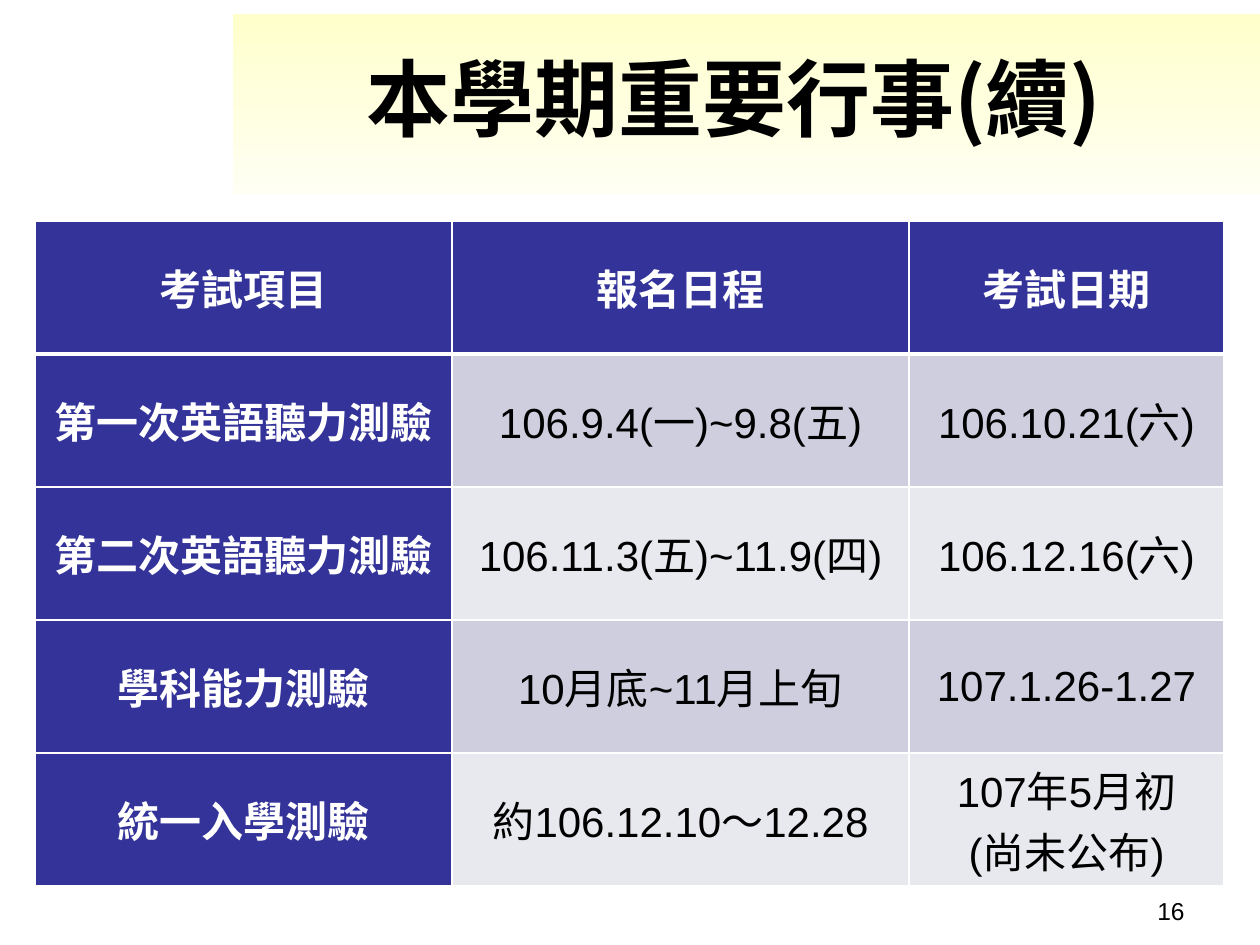
"""Build the slide listing the semester's exam registration and test dates."""
import pptx
import pptx.dml.color
import pptx.enum.shapes
import pptx.enum.text
import pptx.oxml
import pptx.oxml.ns
import pptx.util

TITLE = "本學期重要行事(續)"
PAGE_NUMBER = "16"
EXAMS = [
    ("考試項目", "報名日程", "考試日期"),
    ("第一次英語聽力測驗", "106.9.4(一)~9.8(五)", "106.10.21(六)"),
    ("第二次英語聽力測驗", "106.11.3(五)~11.9(四)", "106.12.16(六)"),
    ("學科能力測驗", "10月底~11月上旬", "107.1.26-1.27"),
    ("統一入學測驗", "約106.12.10～12.28", "107年5月初\n(尚未公布)"),
]
COLORS = {
    "black": "000000", "white": "FFFFFF", "heading": "333399",
    "odd": "CECEDE", "even": "E8E8EF",
    "band_top": "FFFFCC", "band_bottom": "FFFFF3",
}
LATIN, CJK = "Arial", "Noto Sans CJK SC"
BAND = (233, 14, 1027, 180)
TITLE_BOX = (223, 48, 1022, 98)
NUMBER_BOX = (903, 890, 294, 49)
TABLE_LEFT, TABLE_TOP = 35, 221
COLUMN_WIDTHS = (417, 457, 315)
ROW_HEIGHT = 133
CELL_INSET = 9
ALIGN = pptx.enum.text.PP_ALIGN
MIDDLE = pptx.enum.text.MSO_ANCHOR.MIDDLE


def px(length):
    return pptx.util.Emu(round(length * 914400 / 126))


def color(name):
    return pptx.dml.color.RGBColor.from_string(COLORS[name])


def write(frame, text, size, align, ink="black", bold=False, latin=LATIN):
    frame.text = text
    for para in frame.paragraphs:
        para.alignment = align
        for span in para.runs:
            span.font.size = pptx.util.Pt(size)
            span.font.bold = bold
            span.font.name = latin
            span.font.color.rgb = color(ink)
            east_asian = pptx.oxml.parse_xml(
                f'<a:ea {pptx.oxml.ns.nsdecls("a")} typeface="{CJK}"/>')
            span.font._element.find(pptx.oxml.ns.qn("a:latin")).addnext(east_asian)


def add_border(cell, side, points):
    cell._tc.get_or_add_tcPr().append(pptx.oxml.parse_xml(
        f'<a:{side} {pptx.oxml.ns.nsdecls("a")} w="{pptx.util.Pt(points)}">'
        f'<a:solidFill><a:srgbClr val="{COLORS["white"]}"/></a:solidFill></a:{side}>'))


def add_band(page):
    band = page.shapes.add_shape(
        pptx.enum.shapes.MSO_SHAPE.RECTANGLE, *map(px, BAND))
    band.shadow.inherit = False
    band.line.fill.background()
    band.fill.gradient()
    band.fill.gradient_angle = 270
    for stop, name in zip(band.fill.gradient_stops, ("band_top", "band_bottom")):
        stop.color.rgb = color(name)
    page.shapes.title._element.addprevious(band._element)


def add_title(page):
    title = page.shapes.title
    title.left, title.top, title.width, title.height = map(px, TITLE_BOX)
    title.text_frame.vertical_anchor = MIDDLE
    write(title.text_frame, TITLE, 48, ALIGN.CENTER, bold=True, latin=CJK)


def add_exam_table(page):
    table = page.shapes.add_table(
        len(EXAMS), len(COLUMN_WIDTHS), px(TABLE_LEFT), px(TABLE_TOP),
        px(sum(COLUMN_WIDTHS)), px(ROW_HEIGHT * len(EXAMS))).table
    for column, width in zip(table.columns, COLUMN_WIDTHS):
        column.width = px(width)
    for r, exam in enumerate(EXAMS):
        table.rows[r].height = px(ROW_HEIGHT)
        for c, text in enumerate(exam):
            cell = table.cell(r, c)
            heading = r == 0 or c == 0
            cell.vertical_anchor = MIDDLE
            cell.margin_left = cell.margin_right = px(CELL_INSET)
            cell.margin_top = cell.margin_bottom = 0
            write(cell.text_frame, text, 24, ALIGN.CENTER,
                  "white" if heading else "black", heading)
            borders = {"lnL": 1, "lnR": 1,
                       "lnT": 3 if r == 1 else 1, "lnB": 3 if r == 0 else 1}
            for side, points in borders.items():
                add_border(cell, side, points)
            cell.fill.solid()
            cell.fill.fore_color.rgb = color(
                "heading" if heading else "odd" if r % 2 else "even")


def add_page_number(page):
    box = page.shapes.add_textbox(*map(px, NUMBER_BOX))
    box.text_frame.word_wrap = True
    write(box.text_frame, PAGE_NUMBER, 14, ALIGN.RIGHT)


def main():
    deck = pptx.Presentation()
    deck.slide_width, deck.slide_height = px(1260), px(945)
    page = deck.slides.add_slide(deck.slide_layouts[5])
    add_band(page)
    add_title(page)
    add_page_number(page)
    add_exam_table(page)
    deck.save("out.pptx")


if __name__ == "__main__":
    main()
